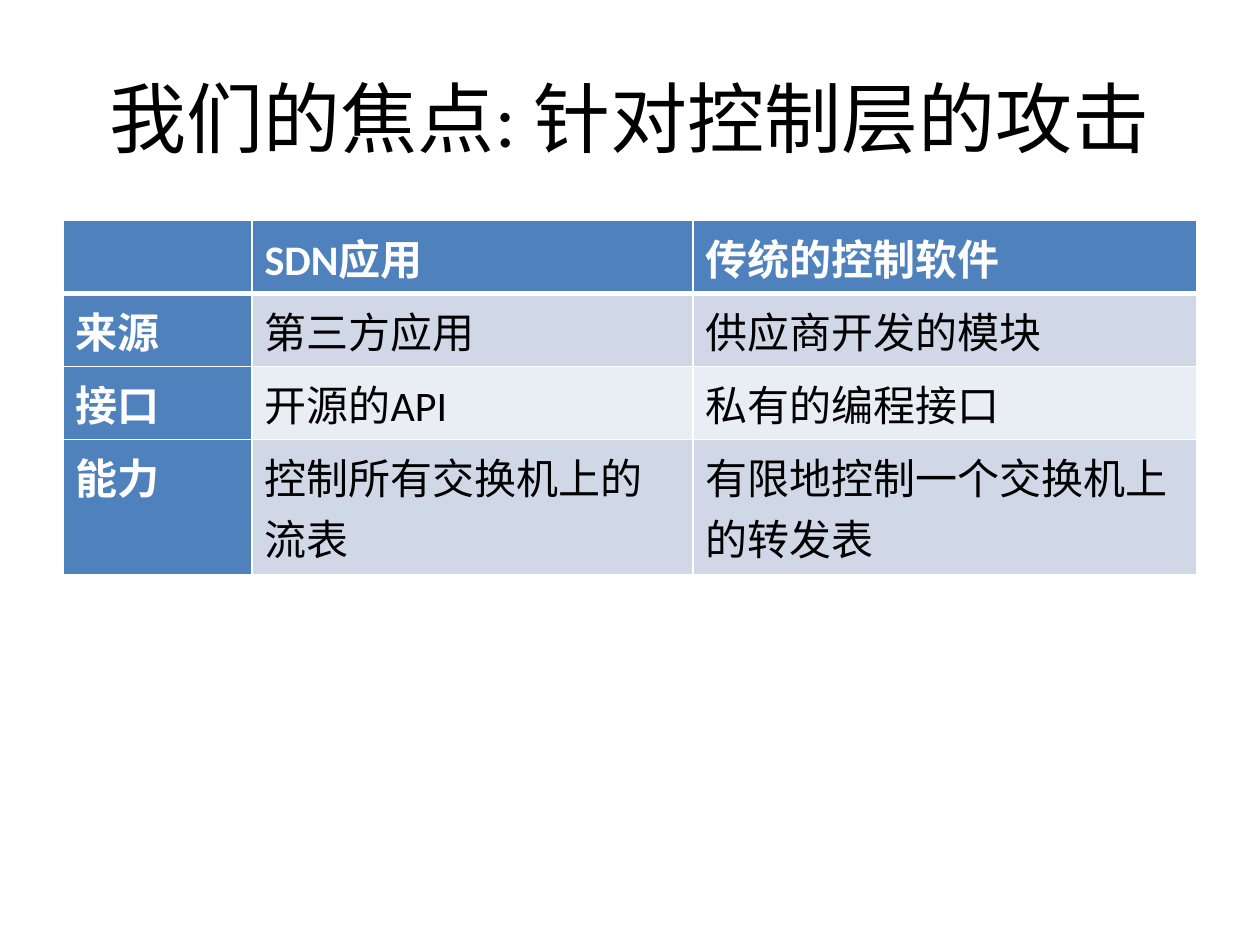
import dataclasses

import lxml.etree
import pptx
import pptx.dml.color
import pptx.enum.text
import pptx.oxml.ns
import pptx.util

Inches = pptx.util.Inches
FONT = "Calibri"
COLORS = {
    "head": "4F81BD",
    "odd": "D0D8E8",
    "even": "E9EDF4",
    "light": "FFFFFF",
    "dark": "000000",
}


@dataclasses.dataclass
class Row:
    label: str
    app: str
    legacy: str


ROWS = [
    Row("", "SDN应用", "传统的控制软件"),
    Row("来源", "第三方应用", "供应商开发的模块"),
    Row("接口", "开源的API", "私有的编程接口"),
    Row("能力", "控制所有交换机上的流表", "有限地控制一个交换机上的转发表"),
]
WIDTHS = [1.5, 3.5, 4]
HEIGHTS = [0.58, 0.58, 0.58, 1.07]


def color(name: str) -> pptx.dml.color.RGBColor:
    return pptx.dml.color.RGBColor.from_string(COLORS[name])


def style(frame, size: float, ink: str, bold: bool = False) -> None:
    for para in frame.paragraphs:
        for font in [para.font] + [run.font for run in para.runs]:
            font.name = FONT
            font.size = pptx.util.Pt(size)
            font.bold = bold
            font.color.rgb = color(ink)


def edge(cell, side: str, width: float) -> None:
    """Draw one white border; call before the cell gets its fill."""
    props = cell._tc.get_or_add_tcPr()
    qn = pptx.oxml.ns.qn
    line = lxml.etree.SubElement(props, qn(f"a:ln{side}"), w=str(pptx.util.Pt(width)))
    fill = lxml.etree.SubElement(line, qn("a:solidFill"))
    lxml.etree.SubElement(fill, qn("a:srgbClr"), val=COLORS["light"])


def add_title(slide, text: str) -> None:
    box = slide.shapes.add_textbox(Inches(0.5), Inches(0.3), Inches(9), Inches(1.25))
    frame = box.text_frame
    frame.word_wrap = True
    frame.vertical_anchor = pptx.enum.text.MSO_ANCHOR.MIDDLE
    frame.text = text
    frame.paragraphs[0].alignment = pptx.enum.text.PP_ALIGN.CENTER
    style(frame, 44, "dark")


def add_grid(slide, rows: list[Row]) -> None:
    table = slide.shapes.add_table(
        len(rows), len(WIDTHS), Inches(0.5), Inches(1.75),
        Inches(sum(WIDTHS)), Inches(sum(HEIGHTS)),
    ).table
    table.first_col = True
    for col, width in zip(table.columns, WIDTHS):
        col.width = Inches(width)
    for line, height in zip(table.rows, HEIGHTS):
        line.height = Inches(height)
    for r, row in enumerate(rows):
        for c, text in enumerate(dataclasses.astuple(row)):
            cell = table.cell(r, c)
            head = r == 0 or c == 0
            for side in "LRTB":
                thick = (r == 0 and side == "B") or (r == 1 and side == "T")
                edge(cell, side, 3 if thick else 1)
            cell.fill.solid()
            cell.fill.fore_color.rgb = color("head" if head else "odd" if r % 2 else "even")
            cell.text_frame.text = text
            style(cell.text_frame, 24, "light" if head else "dark", head)


def main() -> None:
    deck = pptx.Presentation()
    deck.slide_width, deck.slide_height = Inches(10), Inches(7.5)
    slide = deck.slides.add_slide(deck.slide_layouts[6])
    add_title(slide, "我们的焦点: 针对控制层的攻击")
    add_grid(slide, ROWS)
    deck.save("out.pptx")


if __name__ == "__main__":
    main()
